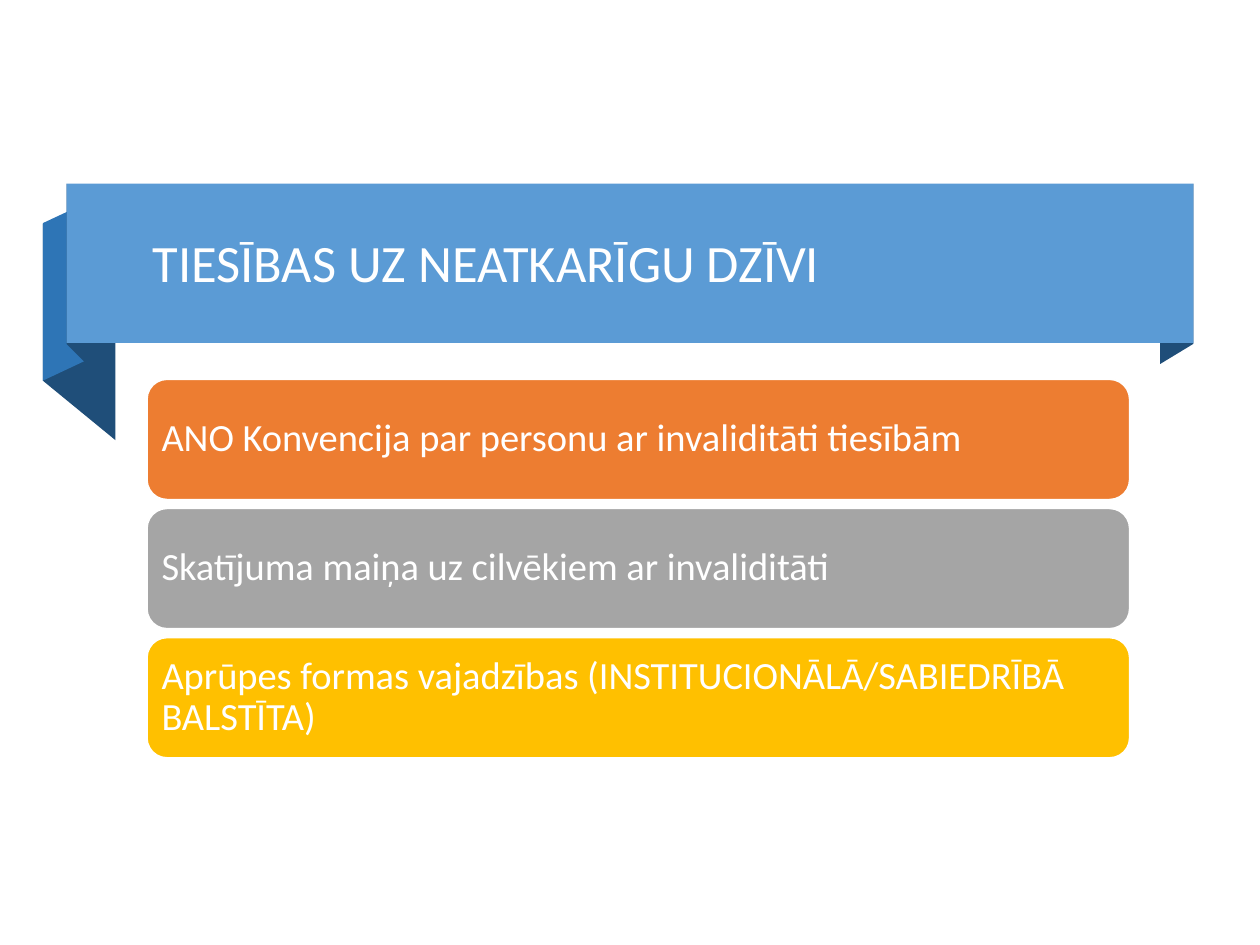
"""Build a slide with a folded ribbon title and three stacked topic bars."""
from pptx import Presentation
from pptx.dml.color import RGBColor
from pptx.enum.shapes import MSO_SHAPE
from pptx.enum.text import MSO_ANCHOR, MSO_AUTO_SIZE, PP_ALIGN
from pptx.util import Pt

RECT = MSO_SHAPE.RECTANGLE
ROUND = MSO_SHAPE.ROUNDED_RECTANGLE
MIDDLE = MSO_ANCHOR.MIDDLE
LEFT = PP_ALIGN.LEFT
NO_FIT = MSO_AUTO_SIZE.NONE

WHITE = RGBColor(0xFF, 0xFF, 0xFF)
NAVY = RGBColor(0x1F, 0x4E, 0x79)
BLUE = RGBColor(0x2E, 0x75, 0xB6)
SKY = RGBColor(0x5B, 0x9B, 0xD5)
ORANGE = RGBColor(0xED, 0x7D, 0x31)
GRAY = RGBColor(0xA5, 0xA5, 0xA5)
GOLD = RGBColor(0xFF, 0xC0, 0x00)


def paint(shape, color):
    shape.shadow.inherit = False
    shape.fill.solid()
    shape.fill.fore_color.rgb = color
    shape.line.fill.background()


def write(shape, text, size, inset):
    frame = shape.text_frame
    frame.text = text
    frame.word_wrap = True
    frame.auto_size = NO_FIT
    frame.vertical_anchor = MIDDLE
    frame.margin_left = frame.margin_right = Pt(inset)
    frame.margin_top = frame.margin_bottom = Pt(4)
    line = frame.paragraphs[0]
    line.alignment = LEFT
    line.line_spacing = 0.9
    font = line.runs[0].font
    font.name = "Calibri"
    font.size = Pt(size)
    font.color.rgb = WHITE


deck = Presentation()
deck.slide_width = Pt(720)
deck.slide_height = Pt(540)
slide = deck.slides.add_slide(deck.slide_layouts[5])
shapes = slide.shapes

folds = [
    (NAVY, [(682, 196.5), (663, 208), (663, 116.5), (682, 105)]),
    (NAVY, [(66, 251.5), (24.5, 217.5), (24.5, 128), (66, 162)]),
    (BLUE, [(48, 206.5), (24.5, 217.5), (24.5, 127.5), (48, 116.5)]),
    (NAVY, [(48, 206.5), (38, 196.5), (38, 105), (48, 115)]),
]
for color, spots in folds:
    points = [(Pt(x), Pt(y)) for x, y in spots]
    outline = shapes.build_freeform(*points[0])
    outline.add_line_segments(points[1:], close=True)
    paint(outline.convert_to_shape(), color)

band = shapes.add_shape(RECT, Pt(38), Pt(105), Pt(644), Pt(91))
paint(band, SKY)

title = shapes.title
title.left, title.top, title.width, title.height = Pt(80), Pt(112.5), Pt(590), Pt(78.5)
write(title, "TIESĪBAS UZ NEATKARĪGU DZĪVI", 30, 7.2)
band.element.addnext(title.element)

topics = [
    (ORANGE, "ANO Konvencija par personu ar invaliditāti tiesībām"),
    (GRAY, "Skatījuma maiņa uz cilvēkiem ar invaliditāti"),
    (GOLD, "Aprūpes formas vajadzības (INSTITUCIONĀLĀ/SABIEDRĪBĀ BALSTĪTA)"),
]
for row, (color, text) in enumerate(topics):
    bar = shapes.add_shape(ROUND, Pt(84), Pt(216.7 + 73.8 * row), Pt(561.6), Pt(68.8))
    paint(bar, color)
    bar.line.color.rgb = WHITE
    bar.line.width = Pt(1)
    write(bar, text, 22, 5)

deck.save("out.pptx")
